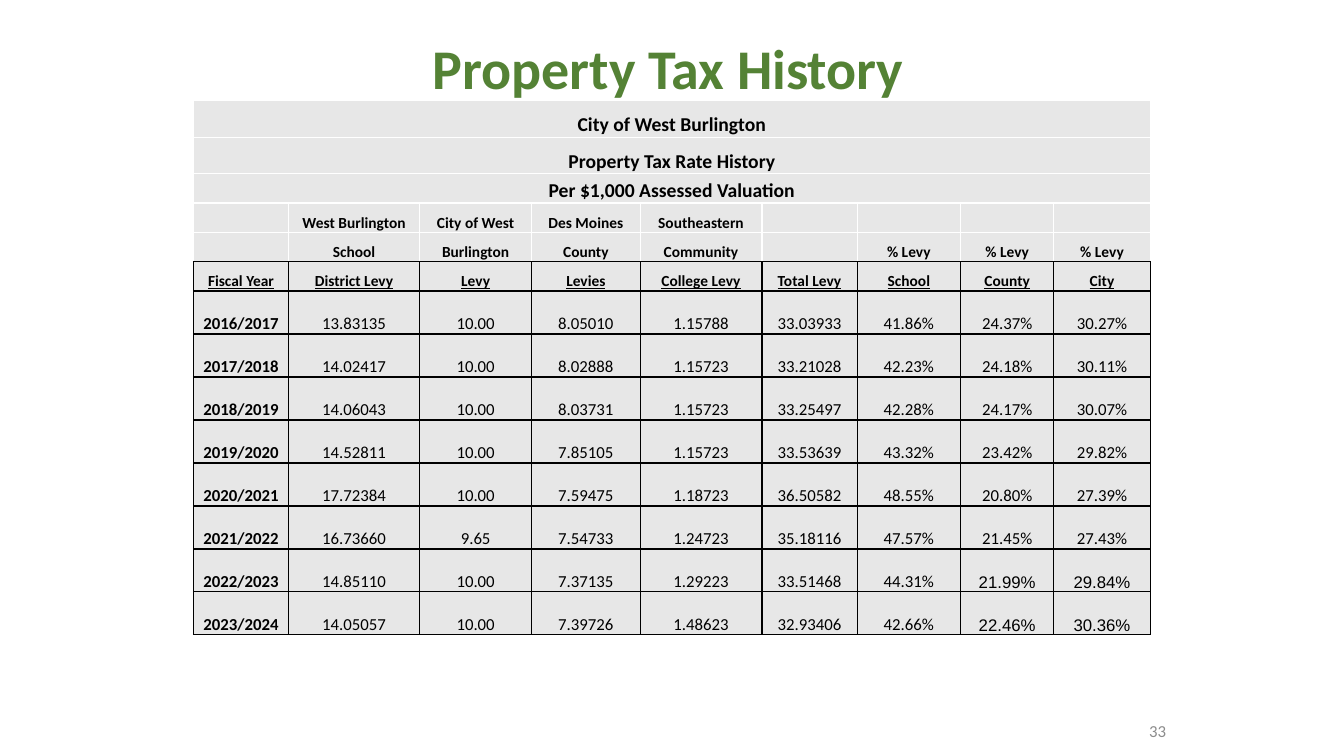
from lxml.etree import SubElement
from pptx import Presentation
from pptx.dml.color import RGBColor
from pptx.enum.text import MSO_ANCHOR as Anchor, PP_ALIGN as Align
from pptx.oxml.ns import qn
from pptx.util import Pt

TITLE_ROWS = ["City of West Burlington", "Property Tax Rate History",
              "Per $1,000 Assessed Valuation"]
HEADINGS = [
    ["", "West Burlington", "City of West", "Des Moines", "Southeastern", "", "", "", ""],
    ["", "School", "Burlington", "County", "Community", "", "% Levy", "% Levy", "% Levy"],
    ["Fiscal Year", "District Levy", "Levy", "Levies", "College Levy", "Total Levy",
     "School", "County", "City"],
]
LEVIES = [line.split() for line in """\
2016/2017 13.83135 10.00 8.05010 1.15788 33.03933 41.86% 24.37% 30.27%
2017/2018 14.02417 10.00 8.02888 1.15723 33.21028 42.23% 24.18% 30.11%
2018/2019 14.06043 10.00 8.03731 1.15723 33.25497 42.28% 24.17% 30.07%
2019/2020 14.52811 10.00 7.85105 1.15723 33.53639 43.32% 23.42% 29.82%
2020/2021 17.72384 10.00 7.59475 1.18723 36.50582 48.55% 20.80% 27.39%
2021/2022 16.73660 9.65 7.54733 1.24723 35.18116 47.57% 21.45% 27.43%
2022/2023 14.85110 10.00 7.37135 1.29223 33.51468 44.31% 21.99% 29.84%
2023/2024 14.05057 10.00 7.39726 1.48623 32.93406 42.66% 22.46% 30.36%""".splitlines()]
COLUMN_WIDTHS = [68, 93.6, 80, 77.5, 87, 68, 74, 66.5, 69]
ROW_HEIGHTS = [26, 26] + [21] * 4 + [30.7] * len(LEVIES)


def color(value):
    return RGBColor.from_string(value)


class TaxSlide:
    font, ink, green, gray = "Calibri", "000000", "548235", "8C8C8C"
    cell_fill, light_rule = "E7E7E7", "FFFFFF"

    def __init__(self, slide):
        self.slide = slide

    def set_text(self, frame, text, size, ink, align, bold=False, underline=False, font=None):
        frame.text = text
        paragraph = frame.paragraphs[0]
        paragraph.alignment = align
        for run in paragraph.runs:
            run.font.name = font or self.font
            run.font.size = Pt(size)
            run.font.bold = bold
            run.font.underline = underline
            run.font.color.rgb = color(ink)
        if not text:  # keeps an empty cell from growing its row
            SubElement(paragraph._p, qn("a:endParaRPr"), sz=str(size * 100))
        return paragraph

    def text(self, left, top, width, height, text, size, ink, align, bold=False):
        frame = self.slide.shapes.add_textbox(Pt(left), Pt(top), Pt(width), Pt(height)).text_frame
        frame.word_wrap = True
        frame.vertical_anchor = Anchor.MIDDLE
        return self.set_text(frame, text, size, ink, align, bold)

    def table(self, left, top, widths, heights):
        table = self.slide.shapes.add_table(
            len(heights), len(widths), Pt(left), Pt(top),
            Pt(sum(widths)), Pt(sum(heights))).table
        table.first_row = table.horz_banding = False
        for column, width in zip(table.columns, widths):
            column.width = Pt(width)
        for row, height in zip(table.rows, heights):
            row.height = Pt(height)
        return table

    def cell(self, cell, text, size, rule, bottom_rule, **style):
        cell.margin_left = cell.margin_right = cell.margin_top = Pt(0.72)
        cell.margin_bottom = Pt(0)
        cell.vertical_anchor = Anchor.BOTTOM
        self.set_text(cell.text_frame, text, size, self.ink, Align.CENTER, **style)
        # Borders come before the fill in the cell properties
        properties = cell._tc.get_or_add_tcPr()
        for side, tint in zip("LRTB", [rule, rule, rule, bottom_rule]):
            line = SubElement(properties, qn(f"a:ln{side}"), w=str(Pt(1)))
            SubElement(SubElement(line, qn("a:solidFill")), qn("a:srgbClr"), val=tint)
        cell.fill.solid()
        cell.fill.fore_color.rgb = color(self.cell_fill)


def main():
    deck = Presentation()
    deck.slide_width, deck.slide_height = Pt(960), Pt(540)
    page = TaxSlide(deck.slides.add_slide(deck.slide_layouts[6]))

    # Slide number
    page.text(792, 504, 48, 36, "33", 12, page.gray, Align.RIGHT)

    # Levy table
    levy_table = page.table(138.2, 72, COLUMN_WIDTHS, ROW_HEIGHTS)
    blanks = [""] * (len(COLUMN_WIDTHS) - 1)
    rows = [[title] + blanks for title in TITLE_ROWS] + HEADINGS + LEVIES
    first_levy = len(TITLE_ROWS + HEADINGS)
    label_row = first_levy - 1
    for r, row in enumerate(rows):
        size = 14 if r < len(TITLE_ROWS) else 11 if r < first_levy else 12
        rule = page.light_rule if r < label_row else page.ink
        bottom_rule = page.light_rule if r < label_row - 1 else page.ink
        for c, entry in enumerate(row):
            in_arial = r >= len(rows) - 2 and c >= len(row) - 2
            page.cell(levy_table.cell(r, c), entry, size, rule, bottom_rule,
                      bold=r < first_levy or c == 0, underline=r == label_row,
                      font="Arial" if in_arial else None)
    for r in range(len(TITLE_ROWS)):
        levy_table.cell(r, 0).merge(levy_table.cell(r, len(blanks)))

    # Title
    title = page.text(138.2, 12.2, 678.2, 77.8, "Property Tax History", 40,
                      page.green, Align.CENTER, bold=True)
    title.line_spacing = 0.9

    deck.save("out.pptx")


if __name__ == "__main__":
    main()
